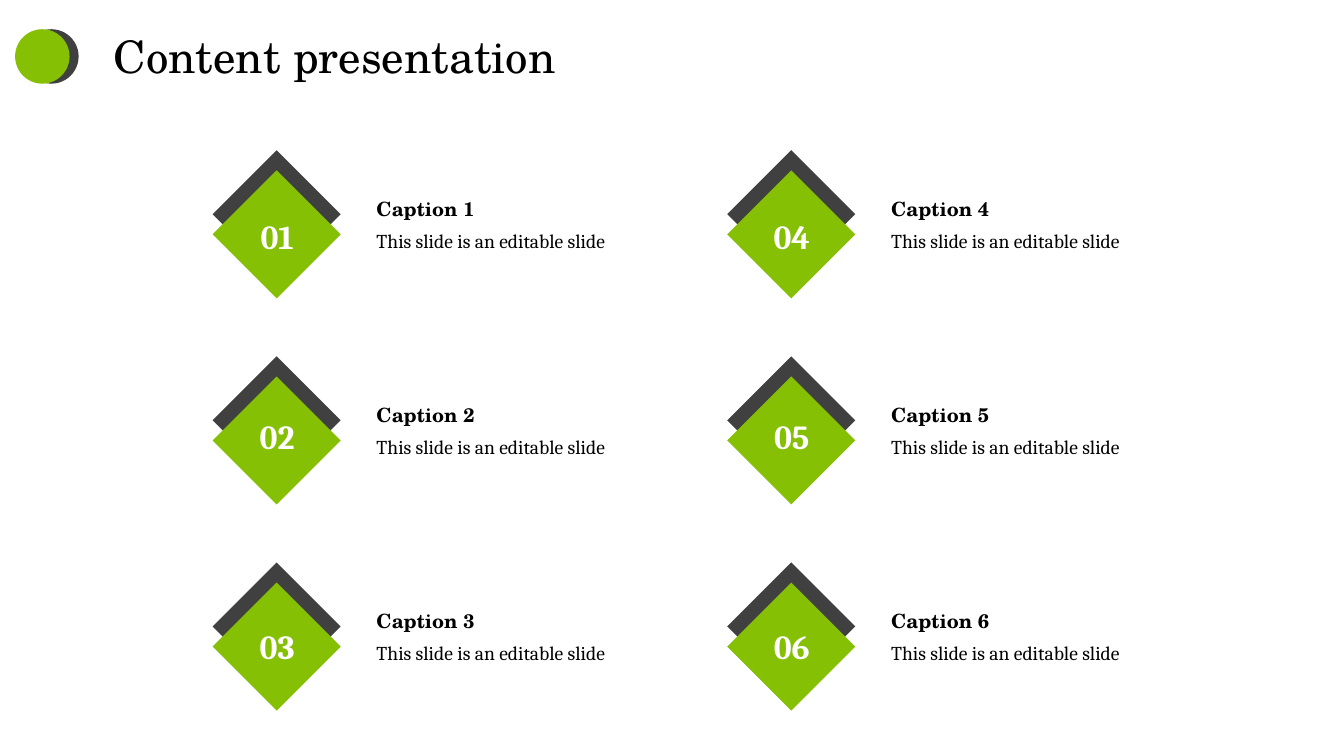
from pptx import Presentation
from pptx.dml.color import RGBColor
from pptx.enum.shapes import MSO_SHAPE
from pptx.enum.text import MSO_AUTO_SIZE, PP_ALIGN
from pptx.util import Inches, Pt

COLS, ROWS = 133.33, 75
HUES = {"green": "85C004", "dark": "404040", "ink": "000000", "white": "FFFFFF"}
HEAD, BODY = "TeX Gyre Schola", "Cambria"
ACROSS, DOWN = 51.05, 20.45  # grid steps between items
NUM_TOPS = (20.9, 40.8, 61.6)


def cells(*spans):
    """Turn columns and rows of the slide grid into lengths."""
    return [Inches(span / 10) for span in spans]


def add_mark(shapes, kind, left, top, size, hue):
    mark = shapes.add_shape(kind, *cells(left, top, size, size))
    mark.shadow.inherit = False
    mark.fill.solid()
    mark.fill.fore_color.rgb = RGBColor.from_string(HUES[hue])
    mark.line.fill.background()


def add_text(shapes, box, lines, inset=True):
    """Each line is (text, font, size, bold, hue)."""
    frame = shapes.add_textbox(*cells(*box)).text_frame
    frame.word_wrap = True
    frame.auto_size = MSO_AUTO_SIZE.SHAPE_TO_FIT_TEXT
    if not inset:
        frame.margin_left = frame.margin_right = 0
        frame.margin_top = frame.margin_bottom = 0
    frame.text = "\n".join(line[0] for line in lines)
    for para, (_, face, size, bold, hue) in zip(frame.paragraphs, lines):
        font = para.runs[0].font
        font.name, font.size, font.bold = face, Pt(size), bold
        font.color.rgb = RGBColor.from_string(HUES[hue])
    return frame


def add_header(shapes):
    group = shapes.add_group_shape().shapes
    for left, hue in ((2.4, "dark"), (1.5, "green")):
        add_mark(group, MSO_SHAPE.OVAL, left, 2.9, 5.4, hue)
    title = ("Content presentation", HEAD, 32, False, "ink")
    add_text(shapes, (10.3, 2.4, 113.8, 6.4), [title])


def add_item(shapes, num, left, top):
    """Draw a double diamond with its caption beside it."""
    for drop, hue in ((0, "dark"), (2, "green")):
        add_mark(shapes, MSO_SHAPE.DIAMOND, left, top + drop, 12.7, hue)
    lines = [
        (f"Caption {num}", HEAD, 14, True, "ink"),
        ("This slide is an editable slide", BODY, 14, False, "ink"),
    ]
    frame = add_text(shapes, (left + 16.25, top + 4.65, 23.9, 5.6), lines, False)
    for para in frame.paragraphs:
        para.space_before = Pt(6)


def add_num(shapes, num, left, top):
    line = (f"{num:02}", BODY, 24, True, "white")
    frame = add_text(shapes, (left, top, 6.4, 5), [line])
    frame.paragraphs[0].alignment = PP_ALIGN.CENTER


def main():
    deck = Presentation()
    deck.slide_width, deck.slide_height = cells(COLS, ROWS)
    shapes = deck.slides.add_slide(deck.slide_layouts[6]).shapes
    add_header(shapes)
    items = shapes.add_group_shape().shapes
    for spot in range(6):
        col, row = divmod(spot, 3)
        left = 21.1 + col * ACROSS
        add_item(items, spot + 1, left, 14.9 + row * DOWN)
        add_num(shapes, spot + 1, left + 3.2, NUM_TOPS[row])
    deck.save("out.pptx")


if __name__ == "__main__":
    main()
